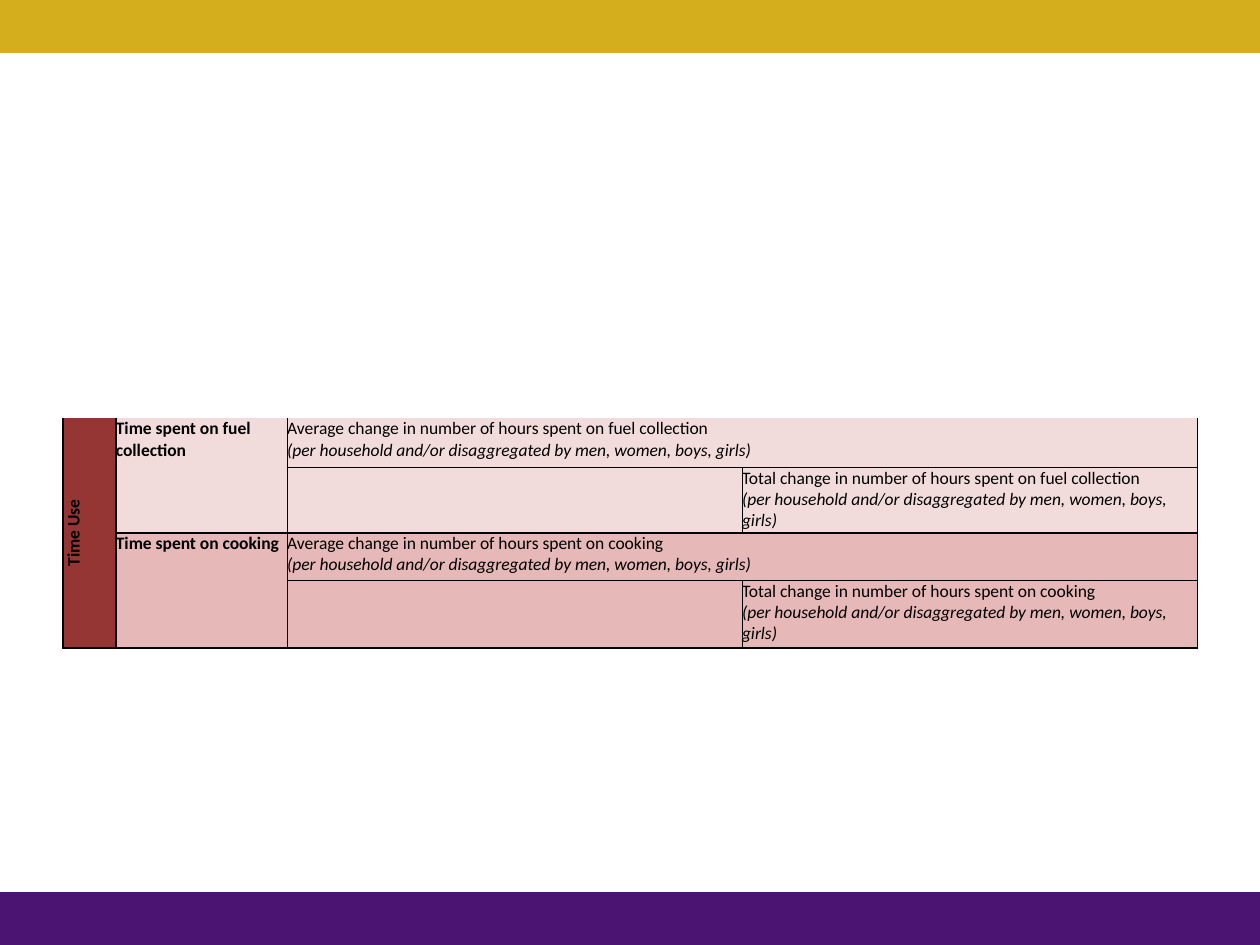
"""Builds the time-use indicator table slide with its coloured bands."""
import pptx
import pptx.dml.color
import pptx.enum.shapes
import pptx.enum.text
import pptx.oxml.ns
import pptx.util
from lxml import etree

Inches, Pt = pptx.util.Inches, pptx.util.Pt
RGBColor = pptx.dml.color.RGBColor
GOLD, PURPLE = RGBColor(0xD4, 0xAE, 0x1D), RGBColor(0x4B, 0x14, 0x72)
MAROON, BLACK = RGBColor(0x96, 0x36, 0x34), RGBColor(0, 0, 0)
LIGHT_PINK, PINK = RGBColor(0xF2, 0xDC, 0xDB), RGBColor(0xE6, 0xB8, 0xB7)

BANDS = [(0, GOLD), (7.08, PURPLE)]
CATEGORY = "Time Use"
TOPICS = [("fuel collection", LIGHT_PINK), ("cooking", PINK)]
DETAIL = "(per household and/or disaggregated by men, women, boys, girls)"
COLS = [0.42, 1.36, 3.61, 3.61]
ROWS = [0.39, 0.52, 0.38, 0.52]
COL_LINES = [1, 1, 0.5, 0.5, 0.5]
ROW_LINES = [0, 0.5, 1, 0.5, 1]


def add_border(cell, side, width):
    tc_pr = cell._tc.get_or_add_tcPr()
    ln = etree.SubElement(tc_pr, pptx.oxml.ns.qn(f"a:ln{side}"), w=str(Pt(width)))
    if width:
        fill = etree.SubElement(ln, pptx.oxml.ns.qn("a:solidFill"))
        etree.SubElement(fill, pptx.oxml.ns.qn("a:srgbClr"), val=str(BLACK))
    else:
        etree.SubElement(ln, pptx.oxml.ns.qn("a:noFill"))


def add_run(p, text, bold=False, italic=False):
    r = p.add_run()
    r.text = text
    r.font.name, r.font.size = "Calibri", Pt(10)
    r.font.bold, r.font.italic = bold, italic
    r.font.color.rgb = BLACK


def add_block(table, row, col, height, width, color):
    bottom, right = row + height, col + width
    for i in range(row, bottom):
        for j in range(col, right):
            cell = table.cell(i, j)
            origin = (i, j) == (row, col)
            add_border(cell, "L", COL_LINES[col] if j == col else 0)
            add_border(cell, "R", COL_LINES[right] if origin or j == right - 1 else 0)
            add_border(cell, "T", ROW_LINES[row] if i == row else 0)
            add_border(cell, "B", ROW_LINES[bottom] if origin or i == bottom - 1 else 0)
            cell.fill.solid()
            cell.fill.fore_color.rgb = color
            cell.margin_left = cell.margin_right = 0
            cell.margin_top = cell.margin_bottom = 0
    cell = table.cell(row, col)
    if height * width > 1:
        cell.merge(table.cell(bottom - 1, right - 1))
    return cell


def add_indicator(cell, text):
    p = cell.text_frame.paragraphs[0]
    add_run(p, text)
    p.add_line_break()
    add_run(p, DETAIL, italic=True)


def main():
    prs = pptx.Presentation()
    prs.slide_width, prs.slide_height = Inches(10), Inches(7.5)
    s = prs.slides.add_slide(prs.slide_layouts[6])
    for top, color in BANDS:
        sp = s.shapes.add_shape(pptx.enum.shapes.MSO_SHAPE.RECTANGLE,
                                0, Inches(top), Inches(10), Inches(0.42))
        sp.shadow.inherit = False
        sp.fill.solid()
        sp.fill.fore_color.rgb = color
        sp.line.fill.background()

    table = s.shapes.add_table(len(ROWS), len(COLS), Inches(0.5), Inches(3.32),
                               Inches(sum(COLS)), Inches(sum(ROWS))).table
    table.first_row = table.horz_banding = False
    for column, width in zip(table.columns, COLS):
        column.width = Inches(width)
    for row, height in zip(table.rows, ROWS):
        row.height = Inches(height)

    cell = add_block(table, 0, 0, len(ROWS), 1, MAROON)
    cell.vertical_anchor = pptx.enum.text.MSO_ANCHOR.MIDDLE
    cell._tc.get_or_add_tcPr().set("vert", "vert270")
    p = cell.text_frame.paragraphs[0]
    p.alignment = pptx.enum.text.PP_ALIGN.CENTER
    add_run(p, CATEGORY, bold=True)

    for k, (topic, color) in enumerate(TOPICS):
        row = 2 * k
        cell = add_block(table, row, 1, 2, 1, color)
        add_run(cell.text_frame.paragraphs[0], f"Time spent on {topic}", bold=True)
        cell = add_block(table, row, 2, 1, 2, color)
        add_indicator(cell, f"Average change in number of hours spent on {topic}")
        add_block(table, row + 1, 2, 1, 1, color)
        cell = add_block(table, row + 1, 3, 1, 1, color)
        add_indicator(cell, f"Total change in number of hours spent on {topic}")

    prs.save("out.pptx")


if __name__ == "__main__":
    main()
